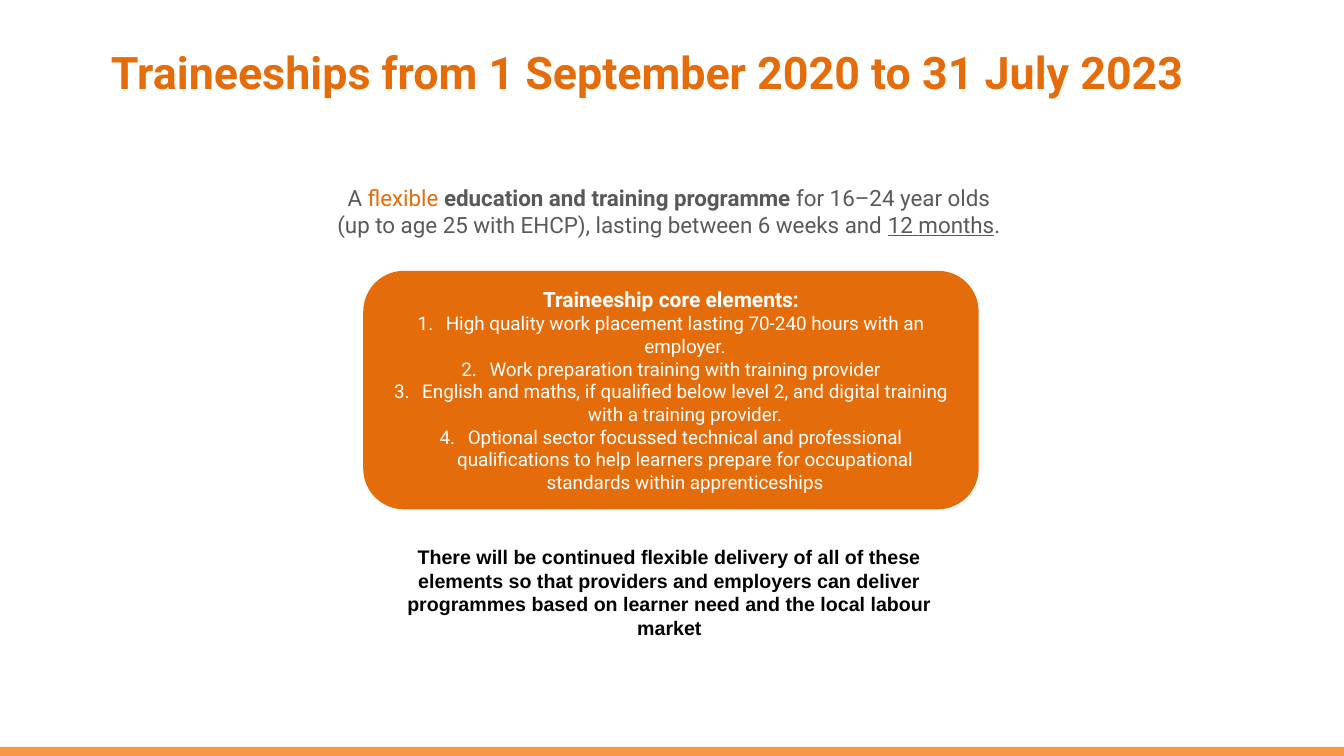
from pptx import Presentation
from pptx.dml.color import RGBColor
from pptx.enum.shapes import MSO_SHAPE
from pptx.enum.text import MSO_ANCHOR, PP_ALIGN
from pptx.oxml.ns import qn
from pptx.util import Cm, Pt
from lxml import etree

RECTANGLE, ROUNDED = MSO_SHAPE.RECTANGLE, MSO_SHAPE.ROUNDED_RECTANGLE
MIDDLE = MSO_ANCHOR.MIDDLE
LEFT, CENTER = PP_ALIGN.LEFT, PP_ALIGN.CENTER
TITLE_ONLY = 5

ORANGE, BAR_ORANGE = "E46C0A", "F79646"
GREY, WHITE, BLACK = "595959", "FFFFFF", "000000"

PAGE_WIDTH, PAGE_HEIGHT = 33.87, 19.05
BAR_HEIGHT = 0.23
NUMBER_INDENT = 0.71

CORE_ELEMENTS = [
    "High quality work placement lasting 70-240 hours with an employer.",
    "Work preparation training with training provider",
    "English and maths, if qualified below level 2, and digital training "
    "with a training provider.",
    "Optional sector focussed technical and professional qualifications to help "
    "learners prepare for occupational standards within apprenticeships",
]


def color(hex_string):
    return RGBColor.from_string(hex_string)


def add_span(para, text, size, hue, bold=False, underline=False, font="Roboto"):
    span = para.add_run()
    span.text = text
    span.font.name = font
    span.font.size = Pt(size)
    span.font.bold = bold
    span.font.underline = underline
    span.font.color.rgb = color(hue)


def number_para(para):
    props = para._p.get_or_add_pPr()
    props.set("marL", str(Cm(NUMBER_INDENT)))
    props.set("indent", str(-Cm(NUMBER_INDENT)))
    etree.SubElement(props, qn("a:buFont"), typeface="+mj-lt")
    etree.SubElement(props, qn("a:buAutoNum"), type="arabicPeriod")


def add_panel(page, kind, box, fill=None, line=None):
    panel = page.shapes.add_shape(kind, *map(Cm, box))
    panel.shadow.inherit = False
    if fill:
        panel.fill.solid()
        panel.fill.fore_color.rgb = color(fill)
    else:
        panel.fill.background()
    if line:
        panel.line.color.rgb = color(line)
        panel.line.width = Pt(2)
    else:
        panel.line.fill.background()
    panel.text_frame.word_wrap = True
    panel.text_frame.vertical_anchor = MIDDLE
    return panel


def add_title(page, box):
    title = page.shapes.title
    title.left, title.top, title.width, title.height = map(Cm, box)
    title.text_frame.vertical_anchor = MIDDLE
    para = title.text_frame.paragraphs[0]
    para.alignment = LEFT
    add_span(para, "Traineeships from 1 September 2020 to 31 July 2023",
             32, ORANGE, bold=True)


def add_intro(page, box):
    para = add_panel(page, ROUNDED, box).text_frame.paragraphs[0]
    para.alignment = CENTER
    add_span(para, "A ", 16, GREY)
    add_span(para, "flexible ", 16, ORANGE)
    add_span(para, "education and training programme ", 16, GREY, bold=True)
    add_span(para, "for 16–24 year olds (up to age 25 with EHCP), "
             "lasting between 6 weeks and ", 16, GREY)
    add_span(para, "12 months", 16, GREY, underline=True)
    add_span(para, ".", 16, GREY)


def add_core_elements(page, box):
    frame = add_panel(page, ROUNDED, box, ORANGE, ORANGE).text_frame
    heading = frame.paragraphs[0]
    heading.alignment = CENTER
    add_span(heading, "Traineeship core elements:", 15, WHITE, bold=True)
    for element in CORE_ELEMENTS:
        para = frame.add_paragraph()
        para.alignment = CENTER
        number_para(para)
        add_span(para, element, 13.5, WHITE)


def add_closing(page, box):
    frame = page.shapes.add_textbox(*map(Cm, box)).text_frame
    frame.word_wrap = True
    para = frame.paragraphs[0]
    para.alignment = CENTER
    add_span(para, "There will be continued flexible delivery of all of these elements "
             "so that providers and employers can deliver programmes based on "
             "learner need and the local labour market",
             14, BLACK, bold=True, font="Arial")


def main():
    deck = Presentation()
    deck.slide_width, deck.slide_height = Cm(PAGE_WIDTH), Cm(PAGE_HEIGHT)
    page = deck.slides.add_slide(deck.slide_layouts[TITLE_ONLY])

    # Bar along the bottom edge
    add_panel(page, RECTANGLE,
              (0, PAGE_HEIGHT - BAR_HEIGHT, PAGE_WIDTH, BAR_HEIGHT), BAR_ORANGE)
    # Heading and introduction
    add_title(page, (2.54, 0.91, 28.8, 1.8))
    add_intro(page, (8.08, 4.11, 17.55, 2.41))
    # Numbered core elements and closing statement
    add_core_elements(page, (9.19, 6.86, 15.44, 5.94))
    add_closing(page, (9.86, 13.61, 14.02, 2.64))

    deck.save("out.pptx")


if __name__ == "__main__":
    main()
